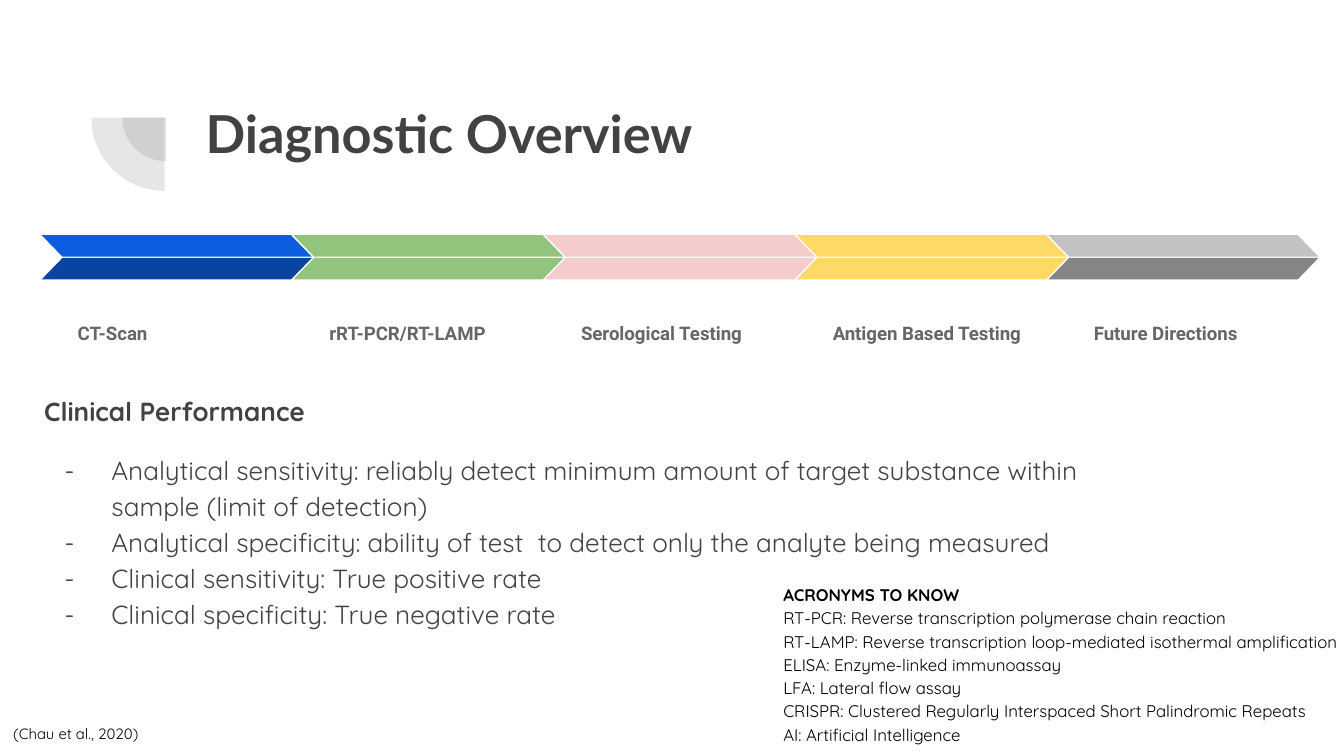
from pptx import Presentation
from pptx.dml.color import RGBColor
from pptx.enum.shapes import MSO_SHAPE as Preset
from pptx.enum.text import MSO_ANCHOR as Anchor, MSO_AUTO_SIZE as AutoSize, PP_ALIGN as Align
from pptx.oxml.ns import qn
from pptx.util import Inches, Pt
from lxml.etree import SubElement

COLORS = {
    "dark": "424242", "label": "666666", "black": "000000",
    "blue": "0D5DDF", "navy": "0944A1", "green": "93C47D", "pink": "F4CCCC",
    "yellow": "FFD966", "silver": "C2C2C2", "gray": "858585",
}


class SlideBuilder:
    """Holds the style and the current slide."""

    body_font = "Quicksand"
    line_spacing = 1.15

    def __init__(self, page):
        self.page = page

    def format_frame(self, frame, anchor=Anchor.TOP):
        frame.word_wrap = True
        frame.auto_size = AutoSize.NONE
        frame.vertical_anchor = anchor
        frame.margin_left = frame.margin_right = Inches(0.1)
        frame.margin_top = frame.margin_bottom = Inches(0.1)

    def format_para(self, para, size, font, color, bold):
        para.alignment = Align.LEFT
        for span in para.runs:
            span.font.size = Pt(size)
            span.font.name = font
            span.font.bold = bold
            span.font.color.rgb = RGBColor.from_string(COLORS[color])

    def title(self, text, left, top, width, height):
        box = self.page.shapes.title
        box.left, box.top = Inches(left), Inches(top)
        box.width, box.height = Inches(width), Inches(height)
        box.text_frame.text = text
        self.format_frame(box.text_frame)
        self.format_para(box.text_frame.paragraphs[0], 28, "Lato", "dark", True)

    def text(self, lines, left, top, width, height, size, color="black",
             font=body_font, bold_first=False, anchor=Anchor.TOP):
        box = self.page.shapes.add_textbox(
            Inches(left), Inches(top), Inches(width), Inches(height))
        box.text_frame.text = "\n".join(lines)
        self.format_frame(box.text_frame, anchor)
        for index, para in enumerate(box.text_frame.paragraphs):
            para.line_spacing = self.line_spacing
            self.format_para(para, size, font, color, bold_first and index == 0)
        return box

    def dash(self, para, color):
        props = para._p.get_or_add_pPr()
        props.set("marL", str(Inches(0.5)))
        props.set("indent", str(Inches(-0.35)))
        bullet_color = SubElement(props, qn("a:buClr"))
        SubElement(bullet_color, qn("a:srgbClr")).set("val", COLORS[color])
        SubElement(props, qn("a:buFont")).set("typeface", self.body_font)
        SubElement(props, qn("a:buChar")).set("char", "-")

    def shape(self, preset, left, top, width, height, color, adjustments):
        shape = self.page.shapes.add_shape(
            preset, Inches(left), Inches(top), Inches(width), Inches(height))
        shape.shadow.inherit = False
        shape.line.fill.background()
        shape.fill.solid()
        shape.fill.fore_color.rgb = RGBColor.from_string(COLORS[color])
        for index, value in enumerate(adjustments):
            shape.adjustments[index] = value
        return shape

    def quarter(self, left, top, size):
        pie = self.shape(Preset.PIE, left, top, size, size, "dark", (108, 162))
        pie.rotation = 270
        tint = pie.fill._xPr.find(".//" + qn("a:srgbClr"))
        SubElement(tint, qn("a:alpha")).set("val", "13000")

    def chevron(self, left, top, upper, lower):
        width, height = 2.01, 0.16
        half = self.shape(Preset.PARALLELOGRAM, left, top, width, height, upper, [0.97])
        half._element.spPr.find(qn("a:xfrm")).set("flipH", "1")
        self.shape(Preset.PARALLELOGRAM, left, top + 0.17, width, height, lower, [0.97])


def main():
    deck = Presentation()
    deck.slide_width = Inches(10)
    deck.slide_height = deck.slide_width * 9 // 16
    builder = SlideBuilder(deck.slides.add_slide(deck.slide_layouts[5]))

    # Heading with quarter-circle ornament
    builder.quarter(0.91, 0.55, 0.65)
    builder.quarter(0.68, 0.33, 1.09)
    builder.title("Diagnostic Overview", 1.43, 0.65, 7.69, 1.09)

    # Timeline of methods: label, upper colour, lower colour, label offset
    steps = [
        ("CT-Scan", "blue", "navy", 0.17),
        ("rRT-PCR/RT-LAMP", "green", "green", 0.17),
        ("Serological Testing", "pink", "pink", 0.17),
        ("Antigen Based Testing", "yellow", "yellow", 0.17),
        ("Future Directions", "silver", "gray", 0.24),
    ]
    first, last = 0.31, 7.8
    for index, (label, upper, lower, offset) in enumerate(steps):
        left = first + (last - first) / (len(steps) - 1) * index
        builder.chevron(left, 1.75, upper, lower)
        builder.text([label], left + offset, 2.17, 1.65, 0.49, 10, "label",
                     "Roboto", bold_first=True, anchor=Anchor.BOTTOM)

    # Clinical performance
    performance = builder.text([
        "Clinical Performance",
        "Analytical sensitivity: reliably detect minimum amount of target substance "
        "within sample (limit of detection)",
        "Analytical specificity: ability of test  to detect only the analyte being measured",
        "Clinical sensitivity: True positive rate",
        "Clinical specificity: True negative rate",
    ], 0.23, 2.81, 8.19, 1.96, 14, "dark", bold_first=True)
    bullets = performance.text_frame.paragraphs[1:]
    bullets[0].space_before = Pt(12)
    for para in bullets:
        builder.dash(para, "dark")

    # Acronyms
    builder.text([
        "ACRONYMS TO KNOW",
        "RT-PCR: Reverse transcription polymerase chain reaction",
        "RT-LAMP: Reverse transcription loop-mediated isothermal amplification",
        "ELISA: Enzyme-linked immunoassay",
        "LFA: Lateral flow assay",
        "CRISPR: Clustered Regularly Interspaced Short Palindromic Repeats",
        "AI: Artificial Intelligence",
    ], 5.73, 4.23, 5.13, 1.4, 9, bold_first=True)

    # Citation
    builder.text(["(Chau et al., 2020)"], 0, 5.27, 1.16, 0.34, 8)

    deck.save("out.pptx")


if __name__ == "__main__":
    main()
